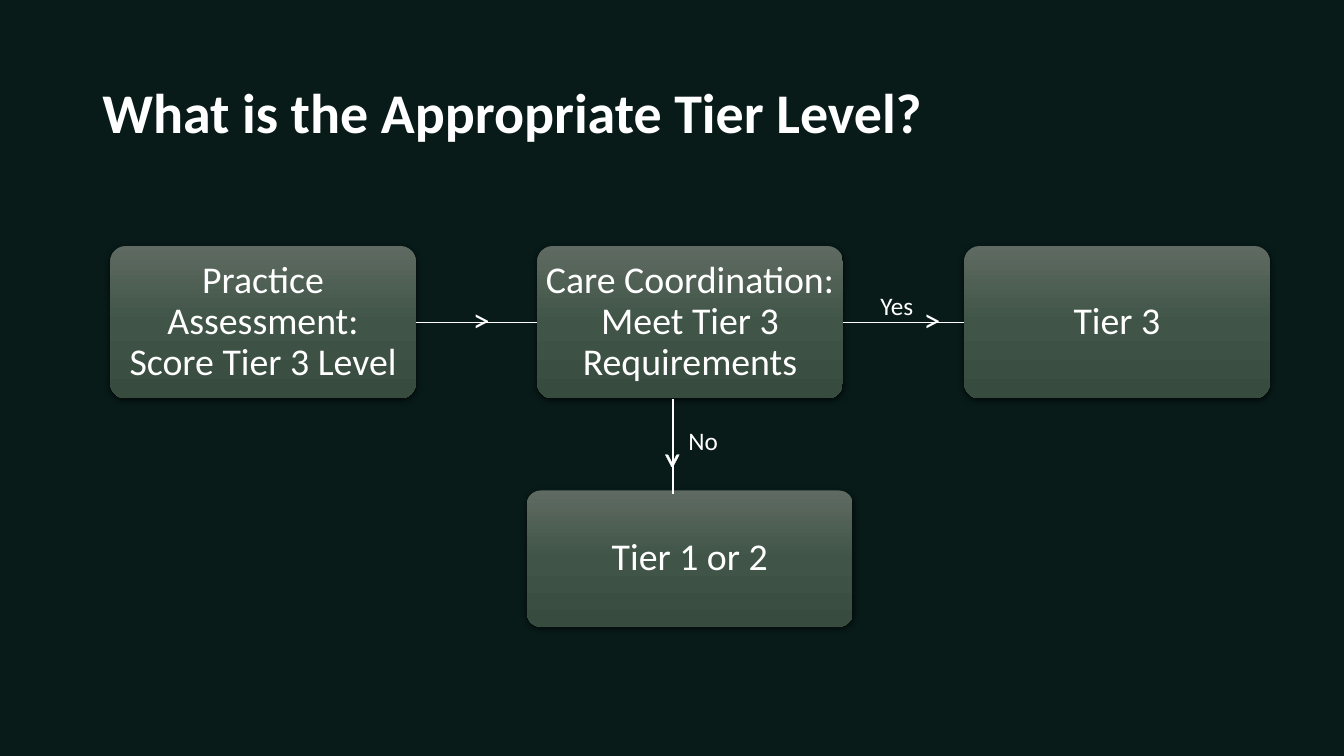
from dataclasses import dataclass

from lxml.etree import SubElement
from pptx import Presentation
from pptx.dml.color import RGBColor as Rgb
from pptx.enum.shapes import MSO_CONNECTOR as Link, MSO_SHAPE as Kind
from pptx.enum.text import MSO_ANCHOR as Anchor, PP_ALIGN as Align
from pptx.oxml import parse_xml
from pptx.oxml.ns import nsdecls, qn
from pptx.shapes.base import BaseShape
from pptx.slide import Slide
from pptx.util import Cm, Pt

HUES = {"back": "081B19", "ink": "FFFFFF", "top": "5F6B62",
        "mid": "405447", "low": "384B3F", "shade": "000000"}
STOPS = {"top": 0, "mid": 50000, "low": 100000}
FONT = "Calibri"

# Main row of boxes, in centimetres
LEFT, TOP, WIDE, HIGH, STEP = 2.78, 6.2, 7.7, 3.84, 10.76
MID = TOP + HIGH / 2


@dataclass
class Box:
    text: str
    x: float
    y: float
    w: float = WIDE
    h: float = HIGH


@dataclass
class Label:
    text: str
    x: float
    y: float
    w: float
    h: float
    size: float = 24
    bold: bool = False
    turn: float = 0
    edge: float = 0


@dataclass
class Line:
    x1: float
    y1: float
    x2: float
    y2: float
    width: float = 1


STEPS = ["Practice Assessment:\vScore Tier 3 Level",
         "Care Coordination: Meet Tier 3 Requirements", "Tier 3"]
BOXES = [Box(text, LEFT + i * STEP, TOP) for i, text in enumerate(STEPS)]
BOXES.append(Box("Tier 1 or 2", 13.28, 12.36, 8.21, 3.43))

LINES = [Line(LEFT + i * STEP + WIDE, MID, LEFT + (i + 1) * STEP, MID)
         for i in range(2)]
LINES.append(Line(16.97, 10.06, 16.97, 12.45, 1.5))

LABELS = [
    Label("What is the Appropriate Tier Level?", 2.33, 1.83, 29.18, 2.29, 40, True),
    Label("Yes", 21.94, 7.19, 1.5, 1.02, 18),
    Label("No", 17.1, 10.59, 1.5, 1.02, 18),
    Label(">", 23.03, 7.42, 1.98, 1.27),
    Label(">", 11.67, 7.42, 1.98, 1.27),
    Label(">", 15.83, 11.68, 2.36, 1.27, turn=90, edge=0.75),
]


def tint(name: str) -> Rgb:
    return Rgb.from_string(HUES[name])


def write(shape: BaseShape, text: str, size: float, bold: bool, frame: dict, para: dict) -> None:
    """Fill a shape with one paragraph in the given format."""
    body = shape.text_frame
    body.text = text
    line = body.paragraphs[0]
    look = {"name": FONT, "size": Pt(size), "bold": bold}
    targets = [(body, frame), (line, para)]
    targets += [(run.font, look) for run in line.runs]
    for target, values in targets:
        for key, value in values.items():
            setattr(target, key, value)
    for run in line.runs:
        run.font.color.rgb = tint("ink")


def shade(shape: BaseShape) -> None:
    """Give a shape its three-stop gradient and soft shadow."""
    shape.fill.gradient()
    shape.fill.gradient_angle = 270
    props = shape.element.spPr
    stops = props.find(".//" + qn("a:gsLst"))
    for stop in list(stops):
        stops.remove(stop)
    for name, pos in STOPS.items():
        stop = SubElement(stops, qn("a:gs"), pos=str(pos))
        SubElement(stop, qn("a:srgbClr"), val=HUES[name])
    shape.shadow.inherit = False
    props.find(qn("a:effectLst")).append(parse_xml(
        f'<a:outerShdw {nsdecls("a")} blurRad="{Pt(4.5)}" dist="{Pt(1.5)}" '
        f'dir="5400000" algn="ctr" rotWithShape="0"><a:srgbClr val="{HUES["shade"]}">'
        '<a:alpha val="63000"/></a:srgbClr></a:outerShdw>'))


def draw_box(slide: Slide, box: Box) -> None:
    shape = slide.shapes.add_shape(
        Kind.ROUNDED_RECTANGLE, Cm(box.x), Cm(box.y), Cm(box.w), Cm(box.h))
    shape.adjustments[0] = 0.1
    shape.line.fill.background()
    shade(shape)
    frame = {"word_wrap": True, "vertical_anchor": Anchor.MIDDLE}
    frame |= {f"margin_{side}": Cm(0.03) for side in ("left", "right", "top", "bottom")}
    write(shape, box.text, 27, False, frame,
          {"alignment": Align.CENTER, "line_spacing": 0.9})


def draw_line(slide: Slide, line: Line) -> None:
    link = slide.shapes.add_connector(
        Link.STRAIGHT, Cm(line.x1), Cm(line.y1), Cm(line.x2), Cm(line.y2))
    link.line.color.rgb = tint("ink")
    link.line.width = Pt(line.width)
    SubElement(link.element.spPr, qn("a:effectLst"))


def draw_label(slide: Slide, label: Label) -> None:
    shape = slide.shapes.add_textbox(
        Cm(label.x), Cm(label.y), Cm(label.w), Cm(label.h))
    shape.rotation = label.turn
    write(shape, label.text, label.size, label.bold,
          {"word_wrap": True}, {"alignment": Align.LEFT})
    if label.edge:
        props = shape.element.find(".//" + qn("a:rPr"))
        props.insert(0, parse_xml(
            f'<a:ln {nsdecls("a")} w="{Pt(label.edge)}"><a:solidFill>'
            f'<a:srgbClr val="{HUES["ink"]}"/></a:solidFill></a:ln>'))


def main() -> None:
    deck = Presentation()
    deck.slide_width, deck.slide_height = Cm(33.87), Cm(19.05)
    slide = deck.slides.add_slide(deck.slide_layouts[6])
    back = slide.background.fill
    back.solid()
    back.fore_color.rgb = tint("back")
    for box in BOXES:
        draw_box(slide, box)
    for line in LINES:
        draw_line(slide, line)
    for label in LABELS:
        draw_label(slide, label)
    deck.save("out.pptx")


if __name__ == "__main__":
    main()
